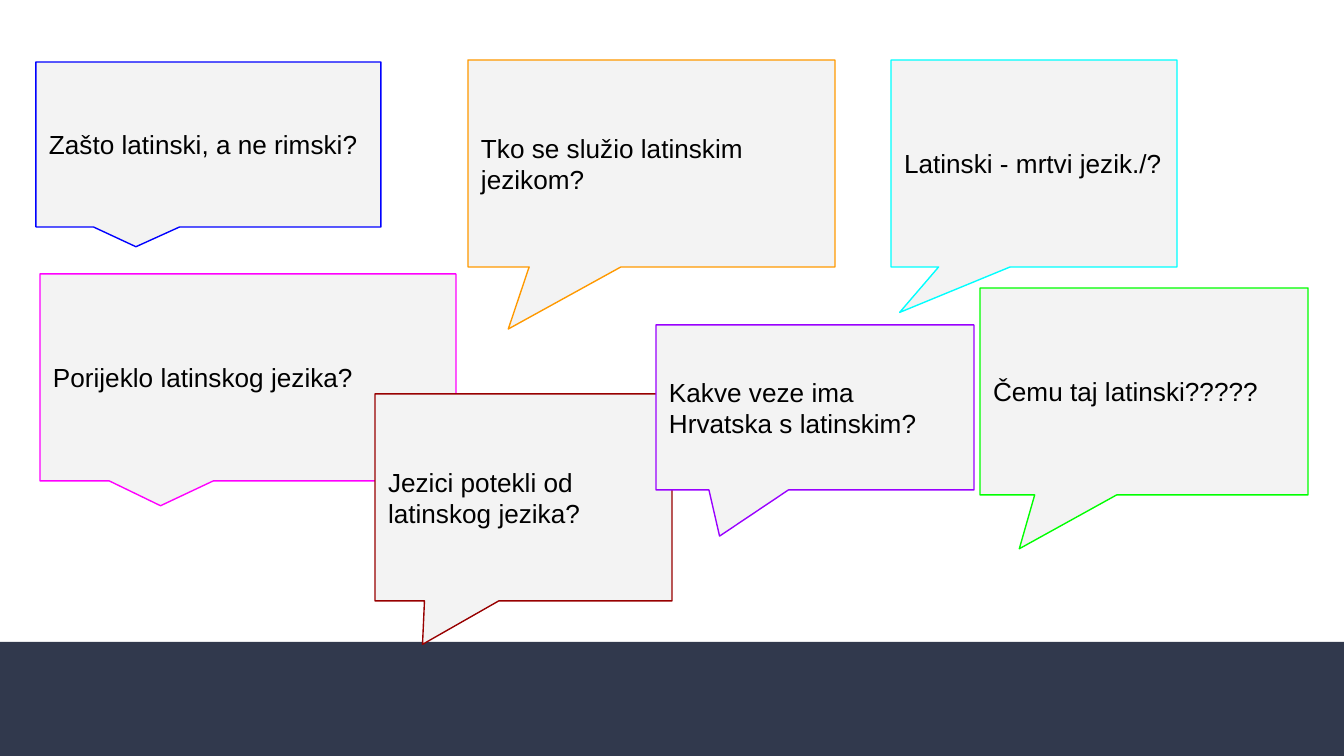
import pptx
import pptx.util
import pptx.dml.color
import pptx.enum.shapes
import pptx.enum.text

SCALE = 914400 / 134.4
SHAPE = pptx.enum.shapes.MSO_SHAPE
INSET = 13

# text, left, top, width, height, line colour, tip offset (x, y)
BUBBLES = [
    ("Zašto latinski, a ne rimski?", 36, 62, 345, 165, "0000FF", (-0.21, 0.62)),
    ("Tko se služio latinskim jezikom?", 468, 60, 367, 207, "FF9900", (-0.39, 0.8)),
    ("Porijeklo latinskog jezika?", 40, 274, 416, 207, "FF00FF", (-0.21, 0.62)),
    ("Jezici potekli od latinskog jezika?", 375, 394, 297, 207, "980000", (-0.34, 0.71)),
    ("Latinski - mrtvi jezik./?", 891, 60, 286, 207, "00FFFF", (-0.47, 0.72)),
    ("Čemu taj latinski?????", 980, 288, 328, 207, "00FF00", (-0.38, 0.76)),
    ("Kakve veze ima Hrvatska s latinskim?", 656, 325, 318, 165, "9900FF", (-0.3, 0.78)),
]


def px(num):
    return pptx.util.Emu(round(num * SCALE))


def color(code):
    return pptx.dml.color.RGBColor.from_string(code)


def style(item, values):
    for name, value in values.items():
        setattr(item, name, value)


def block(slide, kind, box, fill):
    shape = slide.shapes.add_shape(kind, *map(px, box))
    shape.shadow.inherit = False
    shape.fill.solid()
    shape.fill.fore_color.rgb = color(fill)
    return shape


def bubble(slide, text, left, top, width, height, edge, tip):
    shape = block(slide, SHAPE.RECTANGULAR_CALLOUT,
                  (left, top, width, height), "F3F3F3")
    shape.adjustments[0], shape.adjustments[1] = tip
    shape.line.color.rgb = color(edge)
    shape.line.width = pptx.util.Pt(0.75)

    # Text
    frame = shape.text_frame
    style(frame, {
        "word_wrap": True,
        "vertical_anchor": pptx.enum.text.MSO_ANCHOR.MIDDLE,
        **{f"margin_{side}": px(INSET)
           for side in ("left", "top", "right", "bottom")},
    })
    para = frame.paragraphs[0]
    para.alignment = pptx.enum.text.PP_ALIGN.LEFT
    run = para.add_run()
    run.text = text
    style(run.font, {"name": "Arial", "size": pptx.util.Pt(14)})
    run.font.color.rgb = color("000000")


def main():
    deck = pptx.Presentation()
    style(deck, {"slide_width": px(1344), "slide_height": px(756)})
    slide = deck.slides.add_slide(deck.slide_layouts[6])

    # Bottom band
    band = block(slide, SHAPE.RECTANGLE, (0, 642, 1344, 114), "31394D")
    band.line.fill.background()

    # Speech bubbles, back to front
    for entry in BUBBLES:
        bubble(slide, *entry)

    deck.save("out.pptx")


if __name__ == "__main__":
    main()
